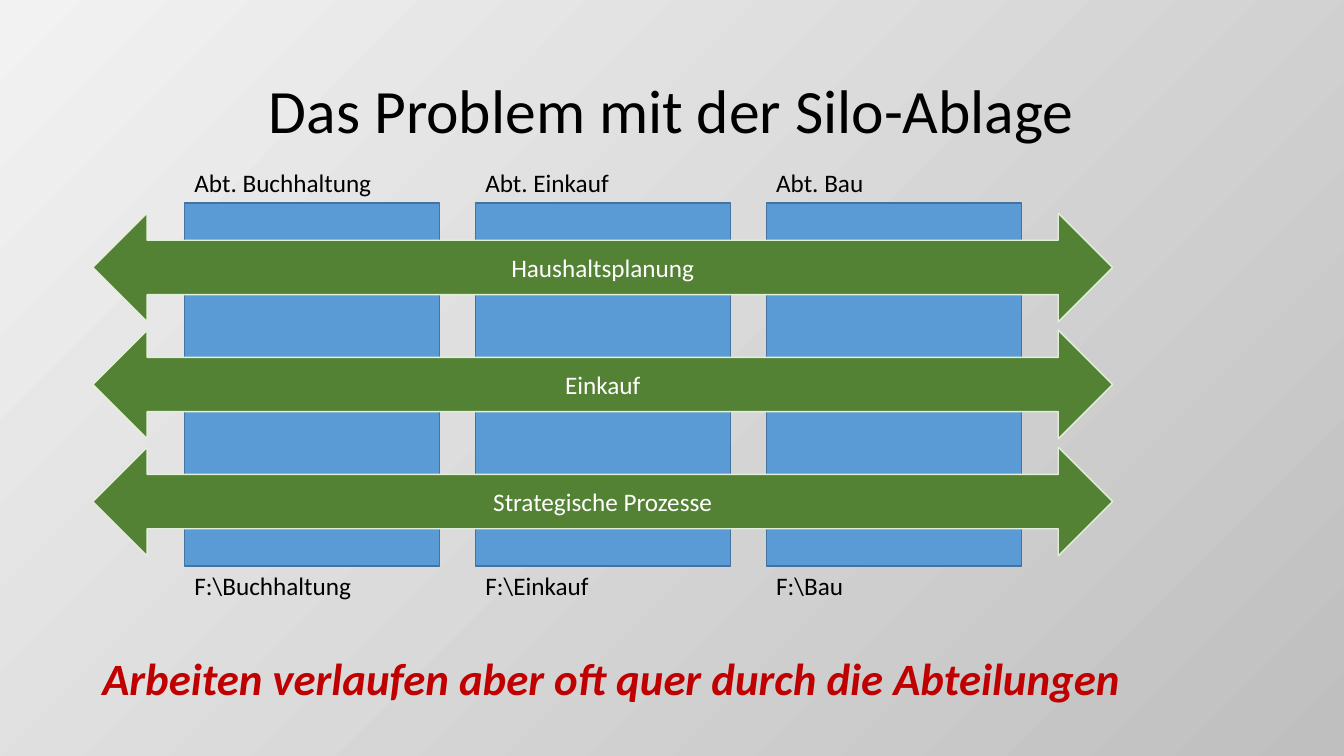
import pptx
import pptx.util
import pptx.dml.color
import pptx.enum.shapes
import pptx.enum.text
from dataclasses import dataclass

Cm = pptx.util.Cm
Shape = pptx.enum.shapes.MSO_SHAPE
Align = pptx.enum.text.PP_ALIGN
Anchor = pptx.enum.text.MSO_ANCHOR
Fit = pptx.enum.text.MSO_AUTO_SIZE


@dataclass(frozen=True)
class Theme:
    font: str = "Calibri"
    head: int = 44
    claim: int = 32
    body: int = 18
    ink: str = "000000"
    white: str = "FFFFFF"
    red: str = "C00000"
    blue: str = "5B9BD5"
    navy: str = "43739E"
    green: str = "548235"
    mint: str = "E2F0D9"
    light: str = "F2F2F2"
    grey: str = "BFBFBF"


def color(code):
    return pptx.dml.color.RGBColor.from_string(code)


class Board:
    def __init__(self, slide, theme):
        self.slide = slide
        self.theme = theme

    def back(self):
        fill = self.slide.background.fill
        fill.gradient()
        fill.gradient_angle = 315
        codes = (self.theme.light, self.theme.grey)
        for stop, place, code in zip(fill.gradient_stops, (0, 1), codes):
            stop.position = place
            stop.color.rgb = color(code)

    def group(self):
        return self.slide.shapes.add_group_shape().shapes

    def letter(self, shape, text, size, tint, align=Align.LEFT, strong=False):
        frame = shape.text_frame
        frame.text = text
        para = frame.paragraphs[0]
        para.alignment = align
        font = para.runs[0].font
        font.name = self.theme.font
        font.size = pptx.util.Pt(size)
        font.color.rgb = color(tint)
        font.bold = font.italic = strong
        return para

    def title(self, text, box):
        shape = self.slide.shapes.add_textbox(*map(Cm, box))
        shape.text_frame.word_wrap = True
        shape.text_frame.vertical_anchor = Anchor.MIDDLE
        para = self.letter(shape, text, self.theme.head, self.theme.ink, Align.CENTER)
        para.line_spacing = 0.9

    def label(self, host, text, box):
        shape = host.add_textbox(*map(Cm, box))
        shape.text_frame.word_wrap = True
        shape.text_frame.auto_size = Fit.SHAPE_TO_FIT_TEXT
        self.letter(shape, text, self.theme.body, self.theme.ink)

    def claim(self, text, box):
        shape = self.slide.shapes.add_textbox(*map(Cm, box))
        shape.text_frame.word_wrap = False
        shape.text_frame.auto_size = Fit.SHAPE_TO_FIT_TEXT
        self.letter(shape, text, self.theme.claim, self.theme.red, strong=True)

    def block(self, host, kind, box, fill, line):
        shape = host.add_shape(kind, *map(Cm, box))
        shape.shadow.inherit = False
        shape.fill.solid()
        shape.fill.fore_color.rgb = color(fill)
        shape.line.color.rgb = color(line)
        shape.line.width = pptx.util.Pt(1)
        return shape

    def silo(self, host, name, left):
        width = 6.43
        self.block(host, Shape.RECTANGLE, (left, 5.12, width, 9.14),
                   self.theme.blue, self.theme.navy)
        self.label(host, f"Abt. {name}", (left, 4.1, width, 1.03))
        self.label(host, f"F:\\{name}", (left, 14.25, width, 1.03))

    def arrow(self, host, text, top):
        shape = self.block(host, Shape.LEFT_RIGHT_ARROW, (2.34, top, 25.7, 2.74),
                           self.theme.green, self.theme.mint)
        shape.text_frame.vertical_anchor = Anchor.MIDDLE
        self.letter(shape, text, self.theme.body, self.theme.white, Align.CENTER)


def main():
    deck = pptx.Presentation()
    deck.slide_width = Cm(33.87)
    deck.slide_height = Cm(19.05)
    board = Board(deck.slides.add_slide(deck.slide_layouts[6]), Theme())
    board.back()
    board.title("Das Problem mit der Silo-Ablage", (2.33, 1.01, 29.21, 3.68))
    silos = board.group()
    for i, name in enumerate(("Buchhaltung", "Einkauf", "Bau")):
        board.silo(silos, name, 4.65 + i * 7.33)
    flows = board.group()
    for i, text in enumerate(("Haushaltsplanung", "Einkauf", "Strategische Prozesse")):
        board.arrow(flows, text, 5.37 + i * 2.95)
    board.claim("Arbeiten verlaufen aber oft quer durch die Abteilungen",
                (2.33, 16.26, 26.44, 1.62))
    deck.save("out.pptx")


if __name__ == "__main__":
    main()
